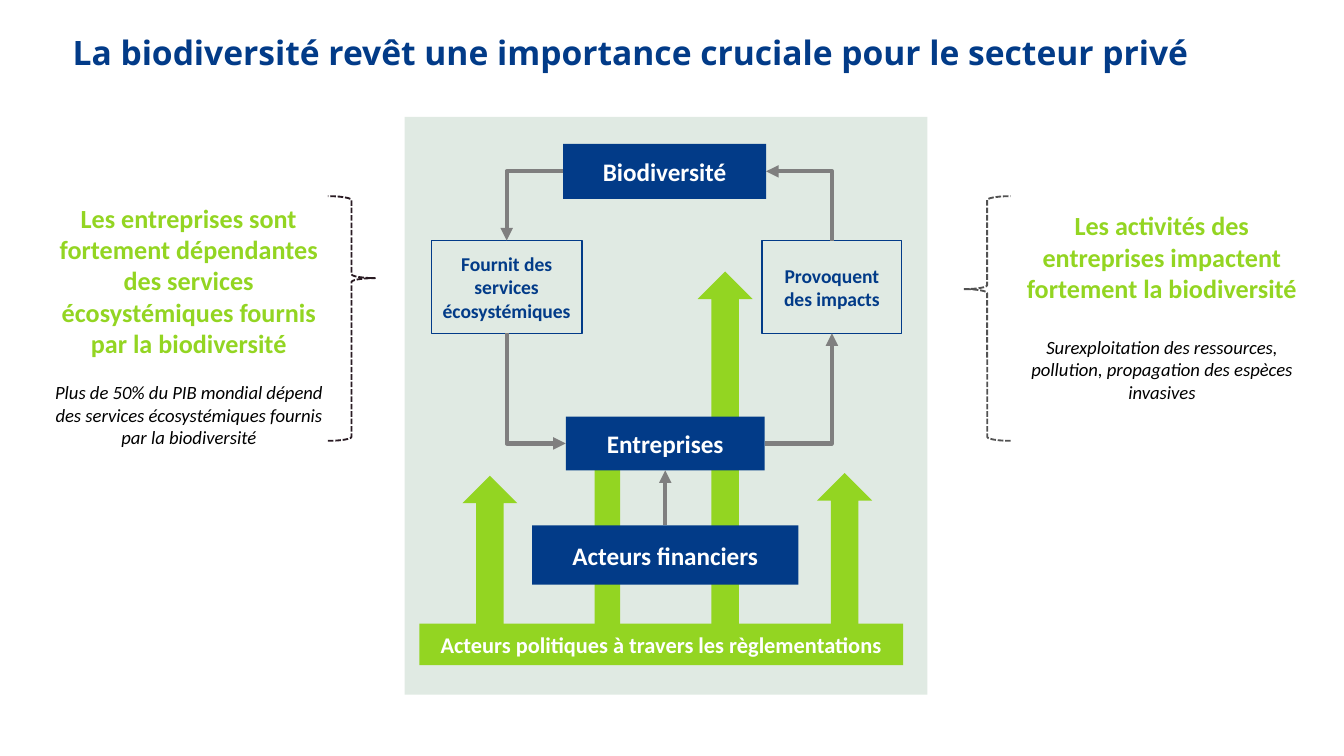
from lxml import etree
from pptx import Presentation
from pptx.dml.color import RGBColor
from pptx.enum.dml import MSO_LINE
from pptx.enum.shapes import MSO_CONNECTOR, MSO_SHAPE
from pptx.enum.text import MSO_ANCHOR, MSO_AUTO_SIZE, PP_ALIGN
from pptx.oxml.ns import qn
from pptx.util import Inches, Pt

RECTANGLE, UP_ARROW, LEFT_BRACE = MSO_SHAPE.RECTANGLE, MSO_SHAPE.UP_ARROW, MSO_SHAPE.LEFT_BRACE
STRAIGHT, ELBOW = MSO_CONNECTOR.STRAIGHT, MSO_CONNECTOR.ELBOW
LEFT, CENTER, MIDDLE = PP_ALIGN.LEFT, PP_ALIGN.CENTER, MSO_ANCHOR.MIDDLE
TOP_SIDE, LEFT_SIDE, BOTTOM_SIDE, RIGHT_SIDE = range(4)

THEME = {
    "blue": "023B88", "green": "93D522", "panel": "E0EAE3", "white": "FFFFFF",
    "black": "000000", "gray": "7F7F7F",
    "title_font": "Open Sans", "font": "Calibri",
    "title": 18, "claim": 14, "box": 13.5, "band": 12, "label": 10.5, "detail": 10,
}

# Content: places are left, top, width, height in inches
SLIDE_WIDTH = 10
TITLE = "La biodiversité revêt une importance cruciale pour le secteur privé"
PANEL = (3.01, 0.87, 3.89, 4.3)
SIDE_NOTES = [  # place, claim, detail, space between them in points
    ((0.28, 1.24, 2.25, 2.36),
     "Les entreprises sont fortement dépendantes des services écosystémiques "
     "fournis par la biodiversité",
     "Plus de 50% du PIB mondial dépend des services écosystémiques fournis "
     "par la biodiversité", 12),
    ((7.52, 1.3, 2.25, 1.96),
     "Les activités des entreprises impactent fortement la biodiversité",
     "Surexploitation des ressources, pollution, propagation des espèces invasives", 17),
]
BRACES = [  # left, tip position, colour, mirrored
    (2.44, 0.335, "291B23", True),
    (7.17, 0.38, "525252", False),
]
POLICY_ARROWS = [  # left, top, width
    (3.44, 3.54, 0.41), (4.33, 3.15, 0.38), (5.19, 2.02, 0.41), (6.08, 3.52, 0.41),
]
POLICY_BOTTOM = 4.67
BOXES = {  # name: text, place, fill, outline, text colour, size
    "biodiversity": ("Biodiversité", (4.19, 1.07, 1.51, 0.41), "blue", None, "white", "box"),
    "services": ("Fournit des services écosystémiques", (3.21, 1.79, 1.12, 0.69),
                 None, "blue", "blue", "label"),
    "impacts": ("Provoquent des impacts", (5.67, 1.79, 1.04, 0.69),
                None, "blue", "blue", "label"),
    "companies": ("Entreprises", (4.21, 3.1, 1.48, 0.4), "blue", None, "white", "box"),
    "finance": ("Acteurs financiers", (3.96, 3.91, 1.98, 0.44), "blue", None, "white", "box"),
    "policy": ("Acteurs politiques à travers les règlementations", (3.12, 4.64, 3.6, 0.31),
               "green", None, "white", "band"),
}
LINKS = [  # kind, begin box and side, end box and side, arrowhead end
    (ELBOW, "biodiversity", LEFT_SIDE, "services", TOP_SIDE, "tailEnd"),
    (ELBOW, "companies", LEFT_SIDE, "services", BOTTOM_SIDE, "headEnd"),
    (ELBOW, "companies", RIGHT_SIDE, "impacts", BOTTOM_SIDE, "tailEnd"),
    (ELBOW, "biodiversity", RIGHT_SIDE, "impacts", TOP_SIDE, "headEnd"),
    (STRAIGHT, "finance", TOP_SIDE, "companies", BOTTOM_SIDE, "tailEnd"),
]


def color(name):
    return RGBColor.from_string(THEME.get(name, name))


def set_frame(frame, horizontal=0.07, vertical=0.04):
    frame.word_wrap = True
    frame.auto_size = MSO_AUTO_SIZE.NONE
    frame.vertical_anchor = MIDDLE
    frame.margin_left = frame.margin_right = Inches(horizontal)
    frame.margin_top = frame.margin_bottom = Inches(vertical)


def write(paragraph, text, size, text_color, font="font", bold=True, italic=False, align=CENTER):
    paragraph.alignment = align
    run = paragraph.add_run()
    run.text = text
    run.font.name = THEME[font]
    run.font.size = Pt(THEME[size])
    run.font.bold, run.font.italic = bold, italic
    run.font.color.rgb = color(text_color)


def add_shape(slide, kind, place, fill=None, outline=None, width=0.75):
    shape = slide.shapes.add_shape(kind, *map(Inches, place))
    shape.shadow.inherit = False
    if fill:
        shape.fill.solid()
        shape.fill.fore_color.rgb = color(fill)
    else:
        shape.fill.background()
    if outline:
        shape.line.color.rgb = color(outline)
        shape.line.width = Pt(width)
    else:
        shape.line.fill.background()
    return shape


def add_link(slide, boxes, kind, begin, begin_side, end, end_side, arrow_end):
    connector = slide.shapes.add_connector(kind, 0, 0, 0, 0)
    connector.begin_connect(boxes[begin], begin_side)
    connector.end_connect(boxes[end], end_side)
    connector.line.color.rgb = color("gray")
    connector.line.width = Pt(2.25)
    properties = connector._element.spPr
    if kind == ELBOW:  # one corner: first across, then up or down
        properties.find(qn("a:prstGeom")).set("prst", "bentConnector2")
    etree.SubElement(properties.find(qn("a:ln")), qn(f"a:{arrow_end}"), type="triangle")
    etree.SubElement(properties, qn("a:effectLst"))


def main():
    presentation = Presentation()
    presentation.slide_width = Inches(SLIDE_WIDTH)
    presentation.slide_height = Inches(SLIDE_WIDTH * 9 / 16)
    slide = presentation.slides.add_slide(presentation.slide_layouts[5])

    # Title
    title = slide.shapes.title
    title.left, title.top, title.width, title.height = map(Inches, (0.44, 0.13, 9.11, 0.55))
    set_frame(title.text_frame, 0.1, 0.05)
    heading = title.text_frame.paragraphs[0]
    heading.line_spacing = 0.9
    write(heading, TITLE, "title", "blue", font="title_font", align=LEFT)

    # Side notes and their braces
    for place, claim, detail, gap in SIDE_NOTES:
        frame = slide.shapes.add_textbox(*map(Inches, place)).text_frame
        set_frame(frame)
        write(frame.paragraphs[0], claim, "claim", "green")
        paragraph = frame.add_paragraph()
        paragraph.space_before = Pt(gap)
        write(paragraph, detail, "detail", "black", bold=False, italic=True)
    for left, tip, outline, mirrored in BRACES:
        brace = add_shape(slide, LEFT_BRACE, (left, 1.46, 0.35, 1.82), outline=outline, width=1)
        brace.line.dash_style = MSO_LINE.SQUARE_DOT
        brace.adjustments[0], brace.adjustments[1] = 0.083, tip
        if mirrored:
            brace._element.spPr.find(qn("a:xfrm")).set("flipH", "1")

    # Panel with the policy arrows behind the boxes
    add_shape(slide, RECTANGLE, PANEL, "panel")
    for left, top, width in POLICY_ARROWS:
        add_shape(slide, UP_ARROW, (left, top, width, POLICY_BOTTOM - top), "green")

    # Boxes
    boxes = {}
    for name, (text, place, fill, outline, text_color, size) in BOXES.items():
        boxes[name] = add_shape(slide, RECTANGLE, place, fill, outline)
        set_frame(boxes[name].text_frame)
        write(boxes[name].text_frame.paragraphs[0], text, size, text_color)

    # Links between the boxes
    for link in LINKS:
        add_link(slide, boxes, *link)

    presentation.save("out.pptx")


if __name__ == "__main__":
    main()
